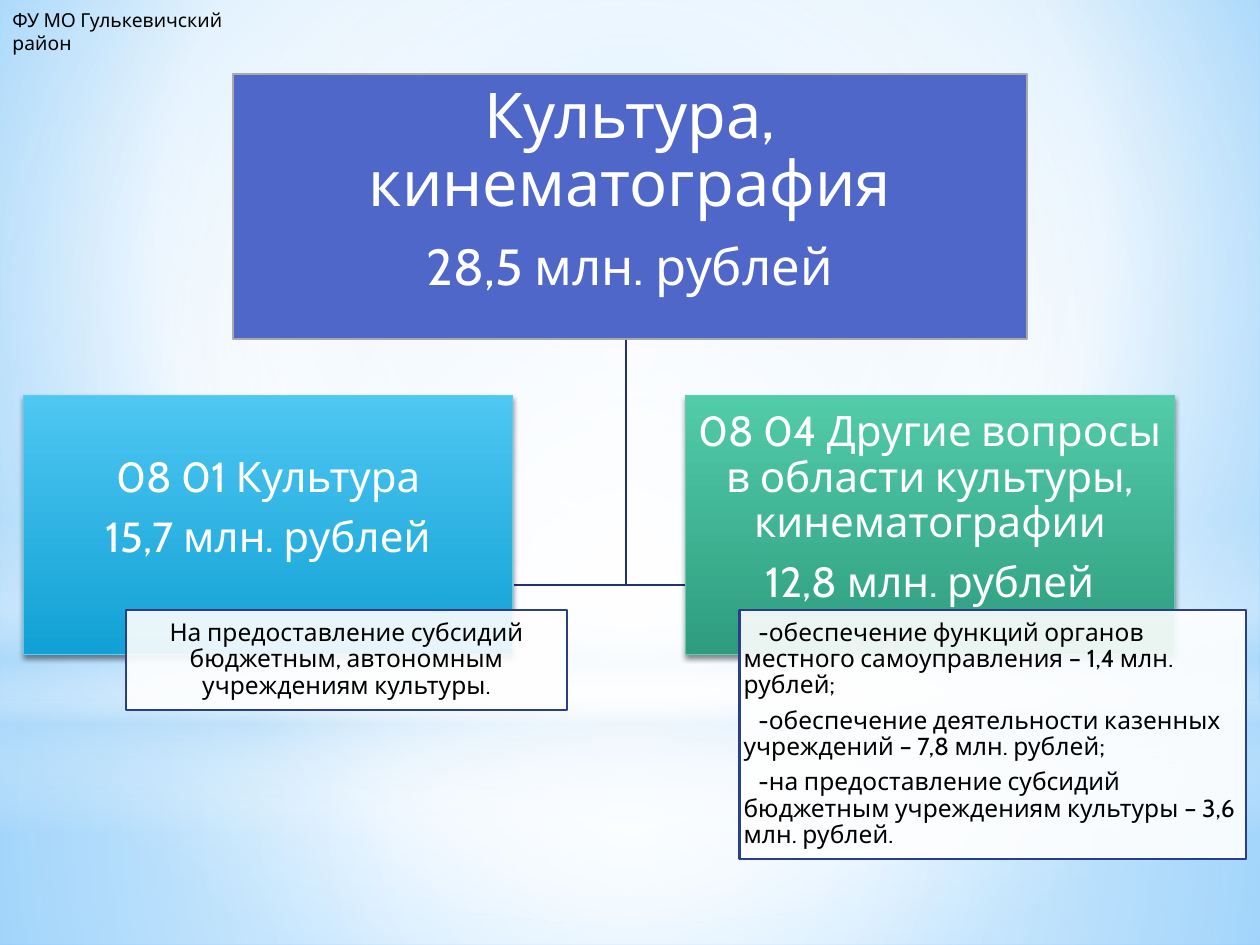
from lxml import etree
from pptx import Presentation
from pptx.dml.color import RGBColor
from pptx.enum.shapes import MSO_SHAPE
from pptx.enum.text import MSO_ANCHOR, PP_ALIGN
from pptx.oxml.ns import qn
from pptx.util import Cm, Pt

RECT, OVAL = MSO_SHAPE.RECTANGLE, MSO_SHAPE.OVAL
MID, LEFT, MIDDLE = PP_ALIGN.CENTER, PP_ALIGN.LEFT, MSO_ANCHOR.MIDDLE
FONT = "Cabin"
COLOR = {
    "white": "FFFFFF", "black": "000000", "sky": "9ED5FF", "deep": "5BB9FF",
    "mist": "B4DCFA", "link": "213172", "head": "4E67C8", "gray": "A9A9A9",
    "blue1": "4EC7F2", "blue2": "11A1D4", "blue3": "5ECCF3",
    "green1": "52CBA9", "green2": "2E9D7F", "green3": "5DCEAF",
    "frame": "2A3E8E",
}


def shade(fill, root, stops, focus=None):
    """Gradient of (position, colour, opacity); linear downwards without a focus."""
    fill.gradient()
    grad = root.find(".//" + qn("a:gradFill"))
    for child in list(grad):
        grad.remove(child)
    items = etree.SubElement(grad, qn("a:gsLst"))
    for pos, name, alpha in stops:
        stop = etree.SubElement(items, qn("a:gs"), pos=str(pos * 1000))
        tint = etree.SubElement(stop, qn("a:srgbClr"), val=COLOR[name])
        if alpha < 100:
            etree.SubElement(tint, qn("a:alpha"), val=str(alpha * 1000))
    if focus:
        way = etree.SubElement(grad, qn("a:path"), path="circle")
        sides = {side: str(part * 1000) for side, part in zip("ltrb", focus)}
        etree.SubElement(way, qn("a:fillToRect"), **sides)
    else:
        etree.SubElement(grad, qn("a:lin"), ang="5400000", scaled="0")


def write(frame, lines, sizes, color, align, pads):
    frame.word_wrap = True
    frame.margin_left, frame.margin_top, frame.margin_right, frame.margin_bottom = map(Cm, pads)
    frame.text = "\n".join(lines)
    for par, size in zip(frame.paragraphs, sizes):
        par.alignment = align
        font = par.runs[0].font
        font.name, font.size = FONT, Pt(size)
        font.color.rgb = RGBColor.from_string(COLOR[color])


prs = Presentation()
prs.slide_width, prs.slide_height = Cm(25.4), Cm(19.05)
slide = prs.slides.add_slide(prs.slide_layouts[6])
shapes = slide.shapes

# Background with soft light layers
shade(slide.background.fill, slide.element,
      [(0, "sky", 100), (60, "white", 100), (100, "deep", 100)], (20, 10, 20, 60))
center = (50, 50, 50, 50)
layers = [
    (RECT, 14.17, 4.88, [(0, "white", 91), (37, "white", 76), (100, "mist", 79)], center),
    (RECT, 0, 14.17, [(0, "white", 89), (48, "white", 62), (100, "mist", 79)], center),
    (RECT, 10.46, 6.35, [(0, "white", 0), (29, "white", 30), (45, "mist", 40),
                         (55, "white", 26), (65, "mist", 60), (100, "white", 0)], None),
    (OVAL, 4.45, 14.17, [(0, "white", 100), (56, "white", 0)], center),
]
for kind, top, high, stops, focus in layers:
    layer = shapes.add_shape(kind, 0, Cm(top), prs.slide_width, Cm(high))
    layer.shadow.inherit = False
    layer.line.fill.background()
    shade(layer.fill, layer.element, stops, focus)

# Links from the heading to both branches
for end in (13.82, 10.36):
    pen = shapes.build_freeform(Cm(12.62), Cm(6.83))
    pen.add_line_segments([(Cm(12.62), Cm(11.79)), (Cm(end), Cm(11.79))], close=False)
    link = pen.convert_to_shape()
    link.shadow.inherit = False
    link.fill.background()
    link.line.color.rgb = RGBColor.from_string(COLOR["link"])
    link.line.width = Pt(1.25)

# Boxes: place, fill colours, line, text, sizes, text colour, alignment, margins
pads = (0.05, 0.05, 0.05, 0.71)
boxes = [
    ((4.7, 1.5, 16, 5.33), ["head"], "gray", 1.25,
     ["Культура, кинематография", "28,5 млн. рублей"], (36, 29), "white", MID, pads),
    ((0.48, 7.98, 9.86, 5.21), ["blue1", "blue2"], "blue3", 0.75,
     ["08 01 Культура", "15,7 млн. рублей"], (24, 24), "white", MID, pads),
    ((2.54, 12.29, 8.89, 2.03), ["white"], "frame", 1.25,
     ["На предоставление субсидий бюджетным, автономным учреждениям культуры."],
     (14,), "black", MID, (0.1, 0.03, 0.1, 0.03)),
    ((13.82, 7.98, 9.86, 5.21), ["green1", "green2"], "green3", 0.75,
     ["08 04 Другие вопросы в области культуры, кинематографии", "12,8 млн. рублей"],
     (24, 24), "white", MID, pads),
    ((14.91, 12.29, 10.21, 5.03), ["white"], "frame", 1.25,
     ["-обеспечение функций органов местного самоуправления – 1,4 млн. рублей;",
      "-обеспечение деятельности казенных учреждений – 7,8 млн. рублей;",
      "-на предоставление субсидий бюджетным учреждениям культуры – 3,6 млн. рублей."],
     (14, 14, 14), "black", LEFT, (0.08, 0.03, 0.08, 0.03)),
]
for place, fills, edge, width, lines, sizes, color, align, margins in boxes:
    box = shapes.add_shape(RECT, *map(Cm, place))
    box.shadow.inherit = False
    box.line.color.rgb = RGBColor.from_string(COLOR[edge])
    box.line.width = Pt(width)
    if len(fills) == 2:
        shade(box.fill, box.element, [(0, fills[0], 100), (100, fills[1], 100)])
        effects = box.element.spPr.find(qn("a:effectLst"))
        drop = etree.SubElement(effects, qn("a:outerShdw"), blurRad=str(Pt(3.1)),
                                dist=str(Pt(1.8)), dir="5400000", rotWithShape="0")
        tint = etree.SubElement(drop, qn("a:srgbClr"), val=COLOR["black"])
        etree.SubElement(tint, qn("a:alpha"), val="45000")
    else:
        box.fill.solid()
        box.fill.fore_color.rgb = RGBColor.from_string(COLOR[fills[0]])
        if fills[0] == "white":
            tint = box.element.spPr.find(qn("a:solidFill"))[0]
            etree.SubElement(tint, qn("a:alpha"), val="90000")
    frame = box.text_frame
    frame.vertical_anchor = MIDDLE
    write(frame, lines, sizes, color, align, margins)
    for par, size in zip(frame.paragraphs, sizes):
        par.line_spacing = 0.9
        par.space_after = Pt(round(size * 0.35, 1))
        if align == LEFT:
            par._p.get_or_add_pPr().set("indent", str(Cm(0.3)))

# Owner label
label = shapes.add_textbox(0, Cm(0.03), Cm(5.72), Cm(0.74))
write(label.text_frame, ["ФУ МО Гулькевичский район"], (11,), "black", LEFT,
      (0.25, 0.13, 0.25, 0.13))

prs.save("out.pptx")
